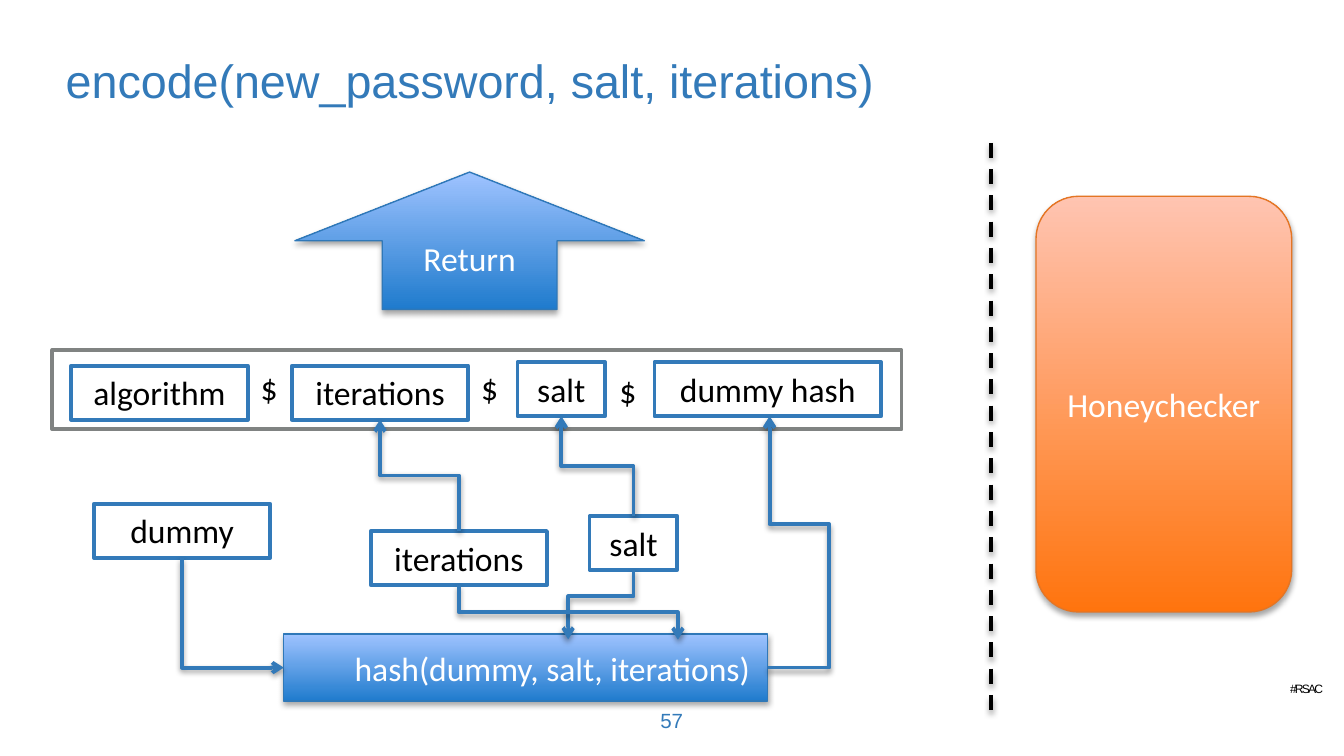
from lxml import etree
from pptx import Presentation
from pptx.dml.color import RGBColor
from pptx.enum.dml import MSO_LINE
from pptx.enum.shapes import MSO_CONNECTOR, MSO_SHAPE
from pptx.enum.text import MSO_ANCHOR, PP_ALIGN
from pptx.oxml.ns import qn
from pptx.util import Pt

rgb = RGBColor.from_string
BLUE = "337AB9"


def put_text(sp, text, size=18, font="Calibri", color="000000", align=PP_ALIGN.CENTER,
             anchor=MSO_ANCHOR.TOP, wrap=True, left=7.2):
    tf = sp.text_frame
    tf.word_wrap = wrap
    tf.vertical_anchor = anchor
    tf.margin_left = Pt(left)
    p = tf.paragraphs[0]
    p.alignment = align
    r = p.add_run()
    r.text = text
    r.font.size = Pt(size)
    r.font.name = font
    r.font.color.rgb = rgb(color)
    return p


def add_shadow(sp, dist, alpha):
    effects = etree.SubElement(sp._element.spPr, qn("a:effectLst"))
    outer = etree.SubElement(effects, qn("a:outerShdw"), blurRad=str(Pt(3.1)),
                             dist=str(Pt(dist)), dir="5400000", rotWithShape="0")
    black = etree.SubElement(outer, qn("a:srgbClr"), val="000000")
    etree.SubElement(black, qn("a:alpha"), val=str(alpha * 1000))


prs = Presentation()
prs.slide_width, prs.slide_height = Pt(720), Pt(405)
s = prs.slides.add_slide(prs.slide_layouts[5])

# Title
title = s.shapes.title
title.left, title.top, title.width, title.height = Pt(28), Pt(8.8), Pt(664), Pt(67.5)
p = put_text(title, "encode(new_password, salt, iterations)", size=25, font="Arial",
             color=BLUE, align=PP_ALIGN.LEFT, anchor=MSO_ANCHOR.MIDDLE)
p.line_spacing = Pt(30)

# Footer: hashtag and slide number
tag = s.shapes.add_textbox(Pt(682), Pt(365), Pt(36), Pt(8))
tf = tag.text_frame
tf.margin_right = tf.margin_top = tf.margin_bottom = 0
p = put_text(tag, "#RSAC", size=6.5, font="Arial", anchor=MSO_ANCHOR.MIDDLE,
             wrap=False, left=0)
p.runs[0]._r.get_or_add_rPr().set("spc", "-100")
number = s.shapes.add_textbox(Pt(318.4), Pt(375), Pt(83), Pt(21.6))
put_text(number, "57", size=11, font="Arial", color=BLUE, anchor=MSO_ANCHOR.MIDDLE)

# Outlined boxes, starting with the frame of the encoded password
boxes = [
    ("", 28, 187.5, 455, 42.5),
    ("algorithm", 38.2, 195.9, 94.5, 29),
    ("iterations", 156.4, 195.9, 94.5, 29),
    ("salt", 277.2, 194, 47, 29),
    ("dummy hash", 350.6, 194, 121.5, 29),
    ("dummy", 50.3, 269.9, 94.5, 29),
    ("iterations", 198.6, 284.5, 94.5, 29),
    ("salt", 315.9, 276.4, 47, 29),
]
for text, x, y, w, h in boxes:
    sp = s.shapes.add_shape(MSO_SHAPE.RECTANGLE, Pt(x), Pt(y), Pt(w), Pt(h))
    sp.shadow.inherit = False
    sp.fill.solid()
    sp.fill.fore_color.rgb = rgb("FFFFFF")
    sp.line.color.rgb = rgb(BLUE if text else "808382")
    sp.line.width = Pt(2)
    if text:
        put_text(sp, text)

# Separators between the fields
for x, y in [(132.5, 193), (250.6, 193), (324.7, 194.4)]:
    put_text(s.shapes.add_textbox(Pt(x), Pt(y), Pt(21), Pt(29)), "$",
             align=PP_ALIGN.LEFT, wrap=False)

# Gradient shapes
blue_fill, orange_fill = ("1F7BCD", "9FC3FF"), ("FF740E", "FFC4B1")
blocks = [
    (MSO_SHAPE.RECTANGLE, "hash(dummy, salt, iterations)", 152, 339.7, 259.3, 36,
     blue_fill, "2F78B8", 35.7),
    (MSO_SHAPE.ROUNDED_RECTANGLE, "Honeychecker", 555, 105.2, 137, 222.7,
     orange_fill, "E47524", 7.2),
    (MSO_SHAPE.UP_ARROW, "Return", 158, 92.2, 187.2, 73.6, blue_fill, "2F78B8", 7.2),
]
for kind, text, x, y, w, h, colors, line, left in blocks:
    sp = s.shapes.add_shape(kind, Pt(x), Pt(y), Pt(w), Pt(h))
    sp.fill.gradient()
    sp.fill.gradient_angle = 90
    for stop, color, position in zip(sp.fill.gradient_stops, colors, (0, 1)):
        stop.color.rgb = rgb(color)
        stop.position = position
    sp.line.color.rgb = rgb(line)
    sp.line.width = Pt(0.75)
    add_shadow(sp, 1.8, 35)
    put_text(sp, text, color="FFFFFF", anchor=MSO_ANCHOR.MIDDLE, left=left)

# Divider and elbow arrows: start, end, preset, adjustments
links = [
    (530.8, 76.5, 530.8, 386, "line", []),
    (411.3, 357.7, 412.3, 223, "bentConnector4", [33.18, 0.57]),
    (339.4, 305.4, 304.4, 342.5, "bentConnector3", [0.38]),
    (245.8, 313.5, 363.2, 342.7, "bentConnector3", [0.5]),
    (245.8, 284.5, 203.6, 224.9, "bentConnector3", [0.5]),
    (339.4, 276.4, 300.7, 223, "bentConnector3", [0.5]),
    (97.5, 298.9, 152, 357.7, "bentConnector2", []),
]
for x1, y1, x2, y2, preset, adjustments in links:
    kind = MSO_CONNECTOR.STRAIGHT if preset == "line" else MSO_CONNECTOR.ELBOW
    dx, dy = x2 - x1, y2 - y1
    turned = preset in ("bentConnector2", "bentConnector3")
    if turned:
        # These leave vertically, so the frame is swapped about its centre and rotated
        cx, cy, w, h = (x1 + x2) / 2, (y1 + y2) / 2, abs(dy), abs(dx)
        x1, y1, x2, y2 = cx - w / 2, cy - h / 2, cx + w / 2, cy + h / 2
    c = s.shapes.add_connector(kind, Pt(x1), Pt(y1), Pt(x2), Pt(y2))
    spPr = c._element.spPr
    if turned:
        xfrm = spPr.find(qn("a:xfrm"))
        xfrm.set("rot", str((90 if dy > 0 else 270) * 60000))
        if (dx > 0) == (dy > 0):
            xfrm.set("flipV", "1")
    geom = spPr.find(qn("a:prstGeom"))
    geom.set("prst", preset)
    guides = geom.find(qn("a:avLst"))
    if guides is None:
        guides = etree.SubElement(geom, qn("a:avLst"))
    for i, value in enumerate(adjustments, 1):
        etree.SubElement(guides, qn("a:gd"), name=f"adj{i}",
                         fmla=f"val {round(value * 100000)}")
    c.line.width = Pt(2)
    if preset == "line":
        c.line.color.rgb = rgb("000000")
        c.line.dash_style = MSO_LINE.DASH
    else:
        c.line.color.rgb = rgb(BLUE)
        etree.SubElement(spPr.find(qn("a:ln")), qn("a:tailEnd"), type="arrow")
    add_shadow(c, 1.6, 38)

prs.save("out.pptx")
